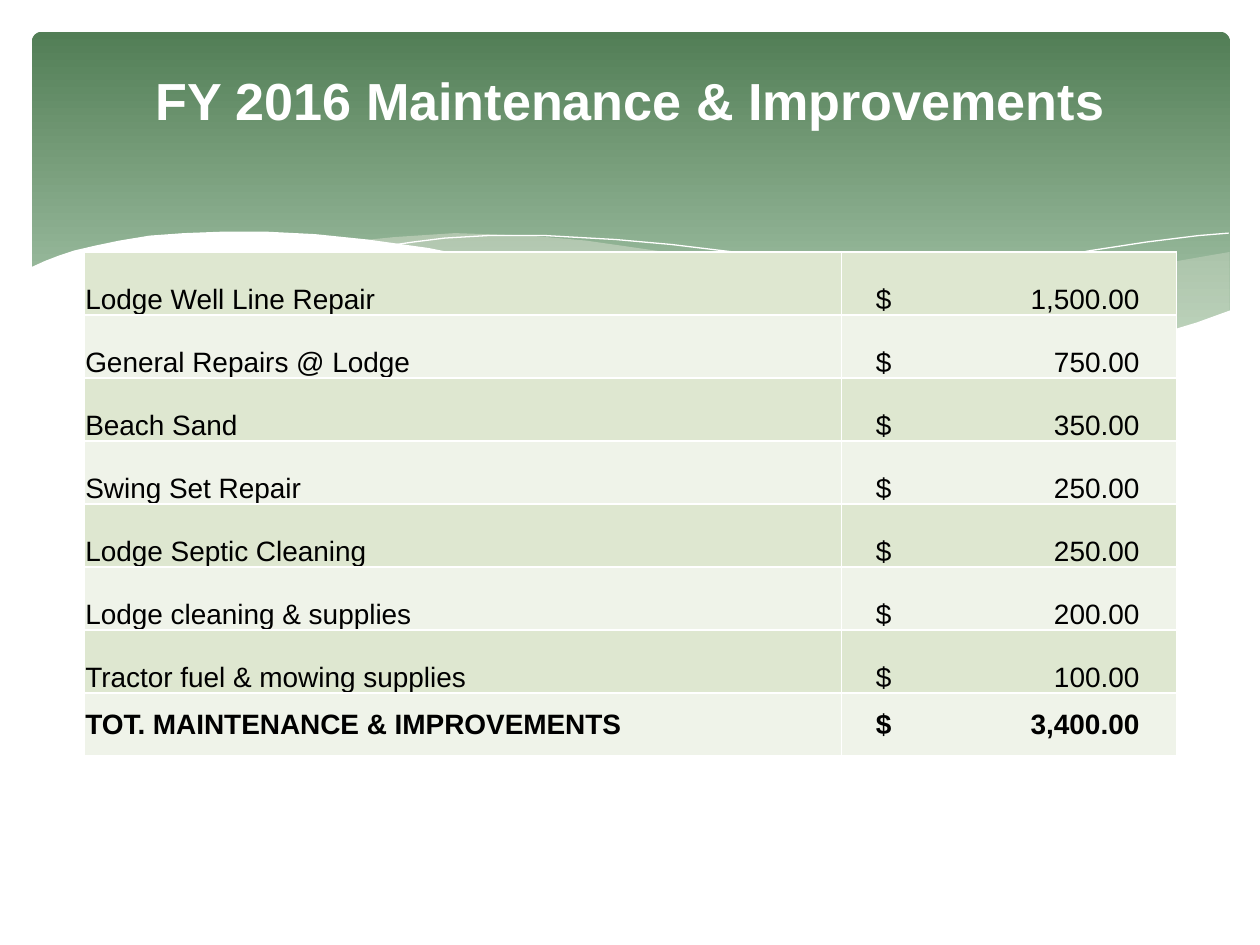
from dataclasses import dataclass

import pptx
import pptx.dml.color
import pptx.enum.dml
import pptx.enum.shapes
import pptx.enum.text
import pptx.oxml
import pptx.oxml.ns
import pptx.util
from lxml import etree

Cm = pptx.util.Cm
Pt = pptx.util.Pt
FONT = "Arial"
WHITE = "FFFFFF"
BLACK = "000000"
MIST = "EAEBDE"
ROW_FILLS = ("DEE7D0", "EFF3E9")


@dataclass
class Wave:
    """A banner outline; points are in hundredths of a centimetre."""
    points: list[tuple[int, int]]
    fill: str | None = None
    opacity: int = 100


@dataclass
class Expense:
    label: str
    amount: str
    is_total: bool = False


WAVES = [
    Wave([(2479, 508), (2375, 526), (2263, 549), (2113, 584), (1913, 630), (1679, 673),
          (1791, 688), (1923, 701), (2040, 706), (2169, 701), (2299, 683), (2393, 658),
          (2479, 627)], MIST, 29),
    Wave([(2268, 693), (2126, 673), (1969, 645), (1793, 610), (1598, 564), (1483, 536),
          (1341, 508), (1181, 485), (1067, 475), (917, 470), (795, 478), (726, 485),
          (869, 505), (1026, 536), (1140, 564), (1346, 610), (1527, 648), (1689, 676),
          (1834, 696), (1994, 706), (2129, 706)], MIST, 40),
    Wave([(785, 495), (833, 488), (897, 480), (983, 475), (1100, 475), (1242, 483),
          (1354, 493), (1478, 508), (1615, 528), (1765, 556), (1930, 592), (2111, 638),
          (2304, 691)]),
    Wave([(1557, 653), (1659, 625), (1765, 597), (1900, 566), (2047, 533), (2200, 505),
          (2311, 488), (2416, 475), (2477, 470)]),
    Wave([(2482, 625), (2413, 650), (2337, 673), (2253, 688), (2159, 699), (2055, 704),
          (1933, 699), (1798, 686), (1646, 665), (1471, 635), (1278, 592), (1135, 559),
          (993, 526), (864, 500), (742, 483), (635, 472), (536, 467), (450, 467),
          (371, 470), (302, 475), (241, 485), (193, 495), (150, 505), (117, 516),
          (91, 526), (58, 541), (58, 836), (2482, 836)], WHITE),
]

EXPENSES = [
    Expense("Lodge Well Line Repair", "1,500.00"),
    Expense("General Repairs @ Lodge", "750.00"),
    Expense("Beach Sand", "350.00"),
    Expense("Swing Set Repair", "250.00"),
    Expense("Lodge Septic Cleaning", "250.00"),
    Expense("Lodge cleaning & supplies", "200.00"),
    Expense("Tractor fuel & mowing supplies", "100.00"),
    Expense("TOT. MAINTENANCE & IMPROVEMENTS", "3,400.00", is_total=True),
]


def rgb(color: str) -> pptx.dml.color.RGBColor:
    return pptx.dml.color.RGBColor.from_string(color)


def paint(fill, color: str) -> None:
    fill.solid()
    fill.fore_color.rgb = rgb(color)


def style_font(paragraph, size: float, color: str, bold: bool) -> None:
    font = paragraph.font
    font.name, font.size, font.bold = FONT, Pt(size), bold
    font.color.rgb = rgb(color)


def draw_band(slide) -> None:
    band = slide.shapes.add_shape(
        pptx.enum.shapes.MSO_SHAPE.ROUNDED_RECTANGLE, Cm(0.64), Cm(0.64), Cm(24.16), Cm(6.86))
    band.adjustments[0] = 0.03
    band.shadow.inherit = False
    band.line.fill.background()
    band.fill.gradient()
    band.fill.gradient_angle = 270
    stops = (("527E56", 0), ("AAC8AD", 0.9))
    for stop, (color, position) in zip(band.fill.gradient_stops, stops):
        stop.color.rgb = rgb(color)
        stop.position = position


def draw_wave(slide, wave: Wave) -> None:
    builder = slide.shapes.build_freeform(*wave.points[0], scale=Cm(0.01))
    builder.add_line_segments(wave.points[1:], close=wave.fill is not None)
    outline = builder.convert_to_shape()
    outline.shadow.inherit = False
    if wave.fill is None:
        outline.fill.background()
        paint(outline.line.fill, WHITE)
        outline.line.width = Pt(0)
        return
    outline.line.fill.background()
    paint(outline.fill, wave.fill)
    if wave.opacity < 100:
        color = outline._element.spPr.find(".//" + pptx.oxml.ns.qn("a:srgbClr"))
        alpha = etree.SubElement(color, pptx.oxml.ns.qn("a:alpha"))
        alpha.set("val", str(wave.opacity * 1000))


def place_title(slide, text: str) -> None:
    title = slide.shapes.title
    title.left, title.top, title.width, title.height = Cm(1.9), Cm(0.84), Cm(21.6), Cm(2.34)
    frame = title.text_frame
    frame.text = text
    frame.auto_size = pptx.enum.text.MSO_AUTO_SIZE.NONE
    frame.vertical_anchor = pptx.enum.text.MSO_ANCHOR.MIDDLE
    frame.paragraphs[0].alignment = pptx.enum.text.PP_ALIGN.CENTER
    style_font(frame.paragraphs[0], 29.8, WHITE, True)
    slide.shapes._spTree.append(title._element)  # in front of the banner


def add_borders(cell) -> None:
    properties = cell._tc.get_or_add_tcPr()
    for side in ("lnL", "lnR", "lnT", "lnB"):
        properties.append(pptx.oxml.parse_xml(
            f'<a:{side} {pptx.oxml.ns.nsdecls("a")} w="{Pt(1)}"><a:solidFill>'
            f'<a:srgbClr val="{WHITE}"/></a:solidFill></a:{side}>'))


def add_right_tab(paragraph, position: int) -> None:
    tabs = etree.SubElement(paragraph._p.get_or_add_pPr(), pptx.oxml.ns.qn("a:tabLst"))
    etree.SubElement(tabs, pptx.oxml.ns.qn("a:tab"), pos=str(position), algn="r")


def fill_cell(cell, text: str, background: str, is_total: bool, is_amount: bool) -> None:
    add_borders(cell)
    paint(cell.fill, background)
    cell.margin_left = Cm(0.7) if is_amount else Cm(0.02)
    cell.margin_right = cell.margin_top = Cm(0.02)
    cell.margin_bottom = 0
    anchors = pptx.enum.text.MSO_ANCHOR
    cell.vertical_anchor = anchors.MIDDLE if is_total else anchors.BOTTOM
    cell.text = text
    paragraph = cell.text_frame.paragraphs[0]
    if is_amount:
        add_right_tab(paragraph, Cm(5.31))
    style_font(paragraph, 16, BLACK, is_total)


def draw_expenses(slide, expenses: list[Expense]) -> None:
    row_height = Cm(1.27)
    table = slide.shapes.add_table(
        len(expenses), 2, Cm(1.7), Cm(5.08), Cm(22.02), row_height * len(expenses)).table
    table.first_row = table.horz_banding = False
    table.columns[0].width, table.columns[1].width = Cm(15.26), Cm(6.76)
    for index, expense in enumerate(expenses):
        table.rows[index].height = row_height
        background = ROW_FILLS[index % 2]
        for column, text in enumerate((expense.label, f"$\t{expense.amount}")):
            fill_cell(table.cell(index, column), text, background, expense.is_total, column == 1)


def main() -> None:
    deck = pptx.Presentation()
    deck.slide_width, deck.slide_height = Cm(25.4), Cm(19.05)
    slide = deck.slides.add_slide(deck.slide_layouts[5])
    paint(slide.background.fill, WHITE)
    draw_band(slide)
    for wave in WAVES:
        draw_wave(slide, wave)
    place_title(slide, "FY 2016 Maintenance & Improvements")
    draw_expenses(slide, EXPENSES)
    deck.save("out.pptx")


if __name__ == "__main__":
    main()
